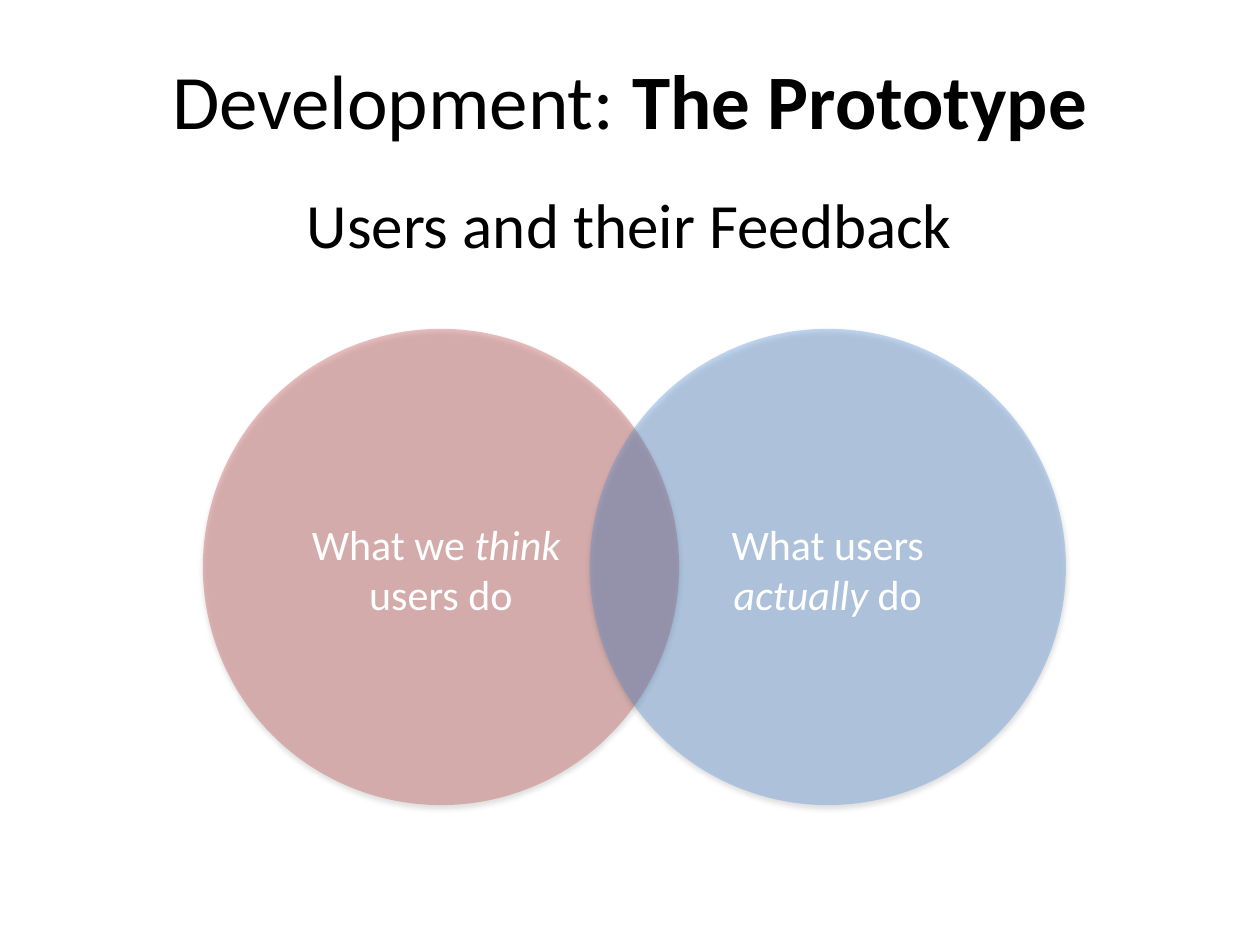
from dataclasses import dataclass

import lxml.etree
import pptx
import pptx.dml.color
import pptx.enum.shapes
import pptx.enum.text
import pptx.oxml
import pptx.oxml.ns
import pptx.util

Inches = pptx.util.Inches
Pt = pptx.util.Pt
qn = pptx.oxml.ns.qn

FONT = "Calibri"
CIRCLE_TOP = 2.61
DIAMETER = 3.78


@dataclass(frozen=True)
class Span:
    text: str
    bold: bool = False
    italic: bool = False


@dataclass(frozen=True)
class Circle:
    left: float
    color: str
    lines: list[list[Span]]


CIRCLES = [
    Circle(1.61, "C0504D", [
        [Span("What we "), Span("think ", italic=True)],
        [Span("users do")],
    ]),
    Circle(4.68, "558ED5", [
        [Span("What users")],
        [Span("actually", italic=True), Span(" do")],
    ]),
]


def rgb(color: str) -> pptx.dml.color.RGBColor:
    return pptx.dml.color.RGBColor.from_string(color)


def add_text(shapes, left: float, top: float, width: float, height: float,
             lines: list[list[Span]], size: float, color: str) -> None:
    box = shapes.add_textbox(Inches(left), Inches(top), Inches(width), Inches(height))
    frame = box.text_frame
    frame.word_wrap = True
    frame.vertical_anchor = pptx.enum.text.MSO_ANCHOR.MIDDLE
    for index, line in enumerate(lines):
        para = frame.paragraphs[0] if index == 0 else frame.add_paragraph()
        para.alignment = pptx.enum.text.PP_ALIGN.CENTER
        for span in line:
            run = para.add_run()
            run.text = span.text
            run.font.name = FONT
            run.font.size = Pt(size)
            run.font.bold = span.bold
            run.font.italic = span.italic
            run.font.color.rgb = rgb(color)


def set_alpha(color_element, percent: int) -> None:
    alpha = lxml.etree.SubElement(color_element, qn("a:alpha"))
    alpha.set("val", str(percent * 1000))


def add_shadow(shape) -> None:
    shape.shadow.inherit = False
    effects = shape._element.spPr.find(qn("a:effectLst"))
    shadow = lxml.etree.SubElement(
        effects, qn("a:outerShdw"), blurRad=str(Pt(3.1)), dist=str(Pt(1.8)),
        dir=str(90 * 60000), rotWithShape="0")
    black = lxml.etree.SubElement(shadow, qn("a:srgbClr"), val="000000")
    set_alpha(black, 35)


def add_circle(page, circle: Circle) -> None:
    group = page.shapes.add_group_shape()
    oval = group.shapes.add_shape(
        pptx.enum.shapes.MSO_SHAPE.OVAL, Inches(circle.left), Inches(CIRCLE_TOP),
        Inches(DIAMETER), Inches(DIAMETER))
    oval.fill.solid()
    oval.fill.fore_color.rgb = rgb(circle.color)
    set_alpha(oval._element.spPr.find(qn("a:solidFill")).find(qn("a:srgbClr")), 36)
    oval.line.fill.background()
    add_shadow(oval)
    add_text(group.shapes, circle.left + 0.14, CIRCLE_TOP + 1.45, 3.5, 0.91,
             circle.lines, 24, "FFFFFF")


def main() -> None:
    deck = pptx.Presentation()
    deck.slide_width = Inches(10)
    deck.slide_height = Inches(7.5)
    page = deck.slides.add_slide(deck.slide_layouts[6])
    title = [[Span("Development: "), Span("The Prototype", bold=True)]]
    add_text(page.shapes, 0.5, 0.16, 9, 1.25, title, 44, "000000")
    subtitle = [[Span("Users and their Feedback")]]
    add_text(page.shapes, 1.75, 1.42, 6.49, 0.71, subtitle, 36, "000000")
    for circle in CIRCLES:
        add_circle(page, circle)
    deck.save("out.pptx")


if __name__ == "__main__":
    main()
